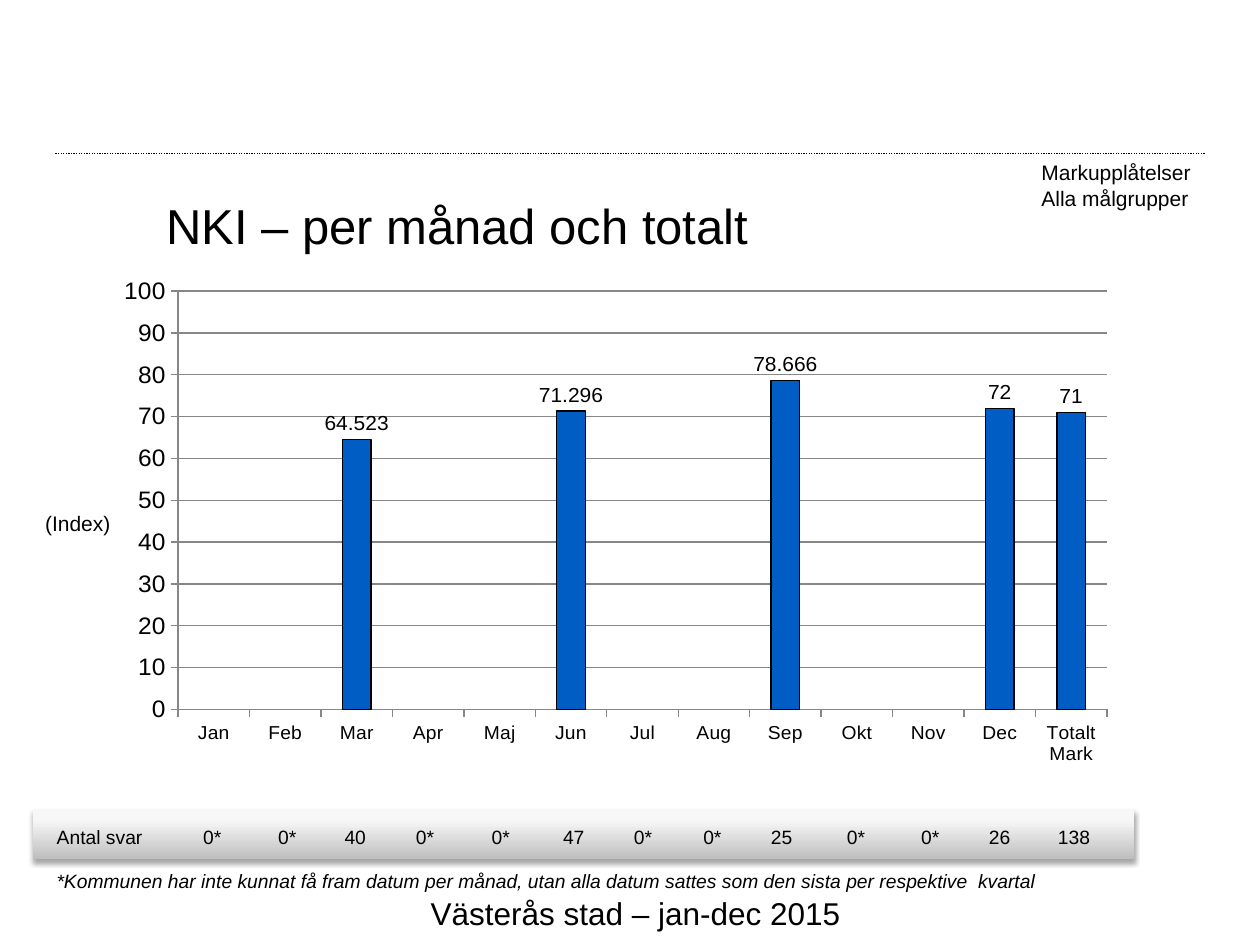
from lxml import etree
from pptx import Presentation
from pptx.chart.data import CategoryChartData
from pptx.dml.color import RGBColor
from pptx.enum.chart import XL_CHART_TYPE, XL_LABEL_POSITION, XL_TICK_MARK
from pptx.enum.dml import MSO_LINE
from pptx.enum.shapes import MSO_CONNECTOR, MSO_SHAPE
from pptx.enum.text import MSO_ANCHOR, MSO_AUTO_SIZE, PP_ALIGN
from pptx.oxml import parse_xml
from pptx.oxml.ns import nsdecls, qn
from pptx.util import Inches, Pt

BLACK = RGBColor(0x00, 0x00, 0x00)
BLUE = RGBColor(0x00, 0x5D, 0xC4)
GRAY = RGBColor(0x87, 0x87, 0x87)
FONT = "Arial"
NO_STYLE = "{2D5ABB26-0587-4C30-8999-92F81FD0307C}"

MONTHS = ["Jan", "Feb", "Mar", "Apr", "Maj", "Jun", "Jul", "Aug", "Sep",
          "Okt", "Nov", "Dec", "Totalt Mark"]
SCORES = {"Mar": 64.523, "Jun": 71.296, "Sep": 78.666, "Dec": 72,
          "Totalt Mark": 71}
COUNTS = {"Mar": "40", "Jun": "47", "Sep": "25", "Dec": "26",
          "Totalt Mark": "138"}
WIDTHS = [1.02, 0.63, 0.56, 0.52, 0.59, 0.61, 0.55, 0.55, 0.55, 0.55,
          0.63, 0.55, 0.55, 0.63]


def inches(*box):
    return [Inches(v) for v in box]


def style(font, size, italic=False):
    font.name, font.size, font.italic = FONT, Pt(size), italic
    font.color.rgb = BLACK


def write(frame, *lines, size=12, italic=False, aligns=()):
    for i, line in enumerate(lines):
        para = frame.paragraphs[0] if i == 0 else frame.add_paragraph()
        run = para.add_run()
        run.text = line
        style(run.font, size, italic)
        if i < len(aligns):
            para.alignment = aligns[i]


def add_text(slide, box, *lines, wrap=False, middle=False, **look):
    frame = slide.shapes.add_textbox(*inches(*box)).text_frame
    frame.word_wrap = wrap
    if middle:
        frame.vertical_anchor = MSO_ANCHOR.MIDDLE
    else:
        frame.auto_size = MSO_AUTO_SIZE.SHAPE_TO_FIT_TEXT
    write(frame, *lines, **look)


def add_header(slide, x, y, w):
    # Dotted rule, topic at the right and title
    rule = slide.shapes.add_connector(MSO_CONNECTOR.STRAIGHT,
                                      *inches(x + w, y, x, y))
    rule.line.color.rgb = BLACK
    rule.line.width = Pt(0.75)
    rule.line.dash_style = MSO_LINE.ROUND_DOT
    props = rule.element.find(qn("p:spPr"))
    etree.SubElement(props, qn("a:effectLst"))
    add_text(slide, (x + w - 1.49, y, 1.48, 0.5), "Markupplåtelser",
             "Alla målgrupper", aligns=[PP_ALIGN.RIGHT])
    add_text(slide, (x + 0.78, y + 0.33, 8.35, 0.47),
             "NKI – per månad och totalt", size=28, wrap=True, middle=True)


def set_plot(chart, x, y, w, h):
    area = chart.element.find(".//" + qn("c:plotArea"))
    for old in area.findall(qn("c:layout")):
        area.remove(old)
    parts = [("layoutTarget", "inner"), ("xMode", "edge"), ("yMode", "edge"),
             ("x", x), ("y", y), ("w", w), ("h", h)]
    body = "".join(f'<c:{tag} val="{val}"/>' for tag, val in parts)
    area.insert(0, parse_xml(
        f'<c:layout {nsdecls("c")}><c:manualLayout>{body}'
        '</c:manualLayout></c:layout>'))


def add_scores(slide, x, y, w, h):
    # Column chart with its axis caption
    data = CategoryChartData()
    data.categories = MONTHS
    data.add_series("Series 1", [SCORES.get(m) for m in MONTHS])
    chart = slide.shapes.add_chart(XL_CHART_TYPE.COLUMN_CLUSTERED,
                                   *inches(x, y, w, h), data).chart
    chart.has_legend = chart.has_title = False
    style(chart.font, 18)
    set_plot(chart, 0.072, 0.074, 0.909, 0.846)

    for axis, size in ((chart.category_axis, 11), (chart.value_axis, 14)):
        style(axis.tick_labels.font, size)
        axis.major_tick_mark = XL_TICK_MARK.OUTSIDE
        axis.format.line.color.rgb = GRAY
    axis = chart.value_axis
    axis.minimum_scale, axis.maximum_scale, axis.major_unit = 0, 100, 10
    axis.major_gridlines.format.line.color.rgb = GRAY

    plot = chart.plots[0]
    plot.gap_width = 150
    plot.vary_by_categories = False
    bars = plot.series[0]
    bars.format.fill.solid()
    bars.format.fill.fore_color.rgb = BLUE
    bars.format.line.color.rgb = BLACK
    bars.format.line.width = Pt(0.75)
    labels = bars.data_labels
    labels.show_value = True
    labels.position = XL_LABEL_POSITION.OUTSIDE_END
    style(labels.font, 12)
    add_text(slide, (x - 0.57, y + 1.98, 0.72, 0.3), "(Index)")


def add_band(slide, x, y, w, h):
    # Shaded band behind the answer counts
    band = slide.shapes.add_shape(MSO_SHAPE.RECTANGLE, *inches(x, y, w, h))
    band.line.fill.background()
    props = band.element.spPr
    stops = "".join(
        f'<a:gs pos="{pos * 1000}"><a:srgbClr val="{tone}"/></a:gs>'
        for pos, tone in ((0, "BEBEBE"), (80, "F7F7F7"), (100, "F8F8F8")))
    props.find(qn("a:prstGeom")).addnext(parse_xml(
        f'<a:gradFill {nsdecls("a")} rotWithShape="1"><a:gsLst>{stops}'
        '</a:gsLst><a:lin ang="16200000" scaled="0"/></a:gradFill>'))
    props.append(parse_xml(
        f'<a:effectLst {nsdecls("a")}><a:outerShdw blurRad="{Pt(3.1)}" '
        f'dist="{Pt(1.8)}" dir="5400000" rotWithShape="0">'
        '<a:srgbClr val="000000"><a:alpha val="35000"/></a:srgbClr>'
        '</a:outerShdw></a:effectLst>'))


def add_counts(slide, x, y, w, h):
    # Answers per month, with the note below
    add_band(slide, x, y, w, h)
    left, top = x + 0.09, y + 0.08
    table = slide.shapes.add_table(
        1, len(WIDTHS), *inches(left, top, sum(WIDTHS), 0.21)).table
    table.first_row = table.horz_banding = False
    table._tbl.tblPr.find(qn("a:tableStyleId")).text = NO_STYLE
    texts = ["Antal svar"] + [COUNTS.get(m, "0*") for m in MONTHS]
    for i, (text, width) in enumerate(zip(texts, WIDTHS)):
        table.columns[i].width = Inches(width)
        cell = table.cell(0, i)
        cell.fill.background()
        cell.vertical_anchor = MSO_ANCHOR.MIDDLE
        write(cell.text_frame, text, size=11,
              aligns=[PP_ALIGN.CENTER if i else PP_ALIGN.LEFT])
    add_text(slide, (left, y + 0.42, 8.35, 0.29),
             "*Kommunen har inte kunnat få fram datum per månad, utan alla "
             "datum sattes som den sista per respektive  kvartal",
             size=11, italic=True, wrap=True)


def main():
    deck = Presentation()
    deck.slide_width, deck.slide_height = inches(10, 7.5)
    slide = deck.slides.add_slide(deck.slide_layouts[6])
    add_header(slide, 0.44, 1.22, 9.12)
    add_scores(slide, 0.83, 2.02, 8.11, 4.05)
    add_counts(slide, 0.26, 6.43, 8.74, 0.39)
    # Footer
    add_text(slide, (3.32, 7.05, 3.48, 0.4), "Västerås stad – jan-dec 2015",
             size=18)
    deck.save("out.pptx")


if __name__ == "__main__":
    main()
